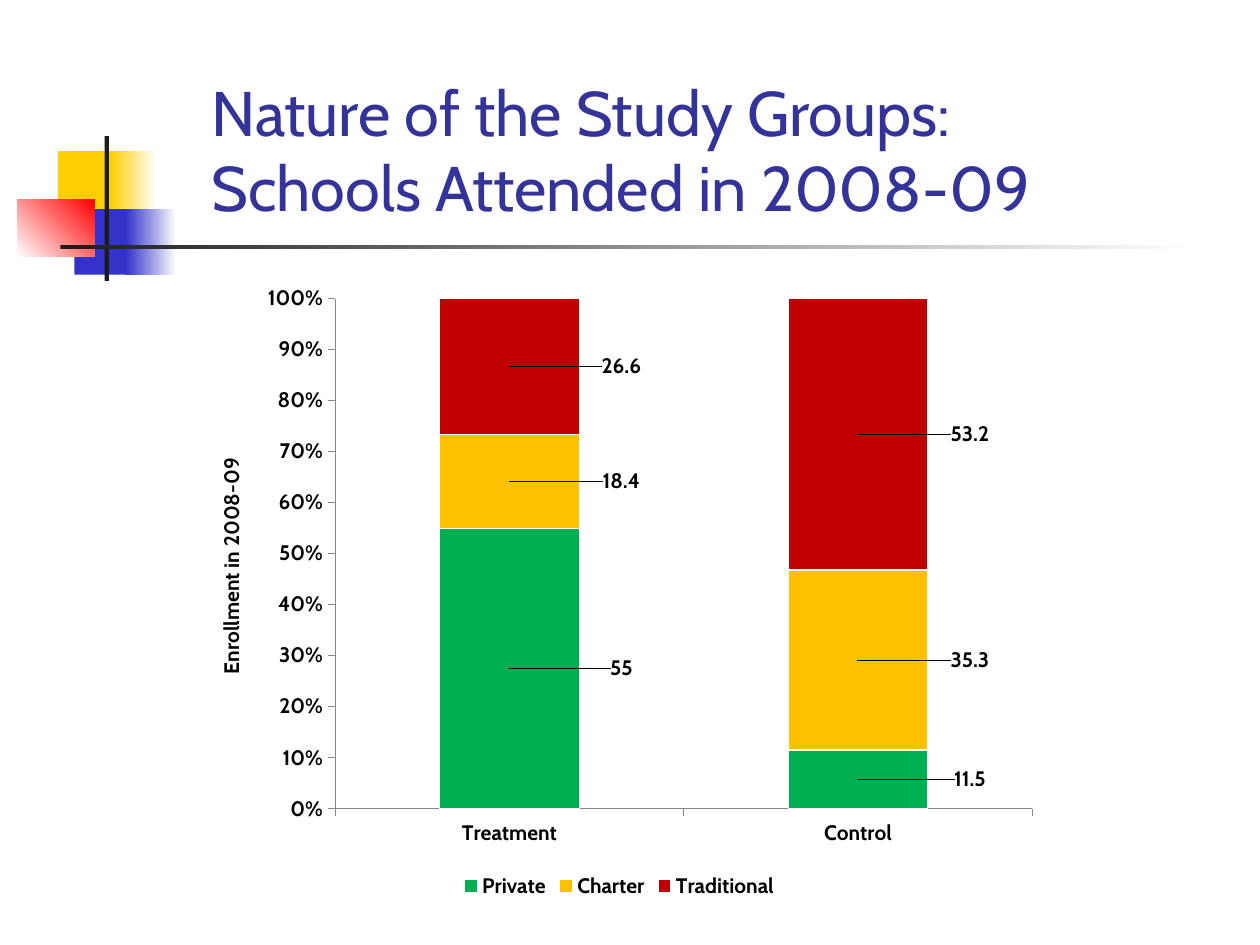
"""Build the study-groups slide: a percent-stacked column chart beneath an accented title."""
import lxml.etree
import pptx
import pptx.chart.data
import pptx.dml.color
import pptx.enum.chart
import pptx.enum.shapes
import pptx.enum.text
import pptx.oxml.ns
import pptx.util

COLORS = {"yellow": "FFCF01", "blue": "3333CC", "red": "FF0000", "ink": "1C1C1C",
          "white": "FFFFFF", "title": "333399", "text": "000000", "axis": "868686",
          "Private": "00B050", "Charter": "FFC000", "Traditional": "C00000"}
FONT = "Cabin"

deck = pptx.Presentation()
deck.slide_width = pptx.util.Inches(10)
deck.slide_height = pptx.util.Inches(7.5)
COLUMN = deck.slide_width / 100
ROW = deck.slide_height / 75
slide = deck.slides.add_slide(deck.slide_layouts[6])


def grid(left, top, width, height):
    return [round(left * COLUMN), round(top * ROW), round(width * COLUMN), round(height * ROW)]


def style(font, size, color, bold):
    for name, value in {"name": FONT, "size": pptx.util.Pt(size), "bold": bold}.items():
        setattr(font, name, value)
    font.color.rgb = pptx.dml.color.RGBColor.from_string(COLORS[color])


accents = [
    ((4.6, 12, 4.8, 5.2), ["yellow"], 0),
    ((8.8, 12, 3.6, 5.2), ["yellow", "white"], 0),
    ((5.9, 16.6, 4.6, 5.2), ["blue"], 0),
    ((10, 16.6, 4, 5.2), ["blue", "white"], 0),
    ((1.4, 15.8, 6.1, 4.6), ["white", "red"], 45),
    ((8.3, 10.8, 0.35, 11.5), ["ink"], 0),
    ((4.8, 19.45, 90, 0.35), ["ink", "white"], 0),
]
for place, shades, angle in accents:
    accent = slide.shapes.add_shape(pptx.enum.shapes.MSO_SHAPE.RECTANGLE, *grid(*place))
    accent.shadow.inherit = False
    accent.line.fill.background()
    if len(shades) == 1:
        accent.fill.solid()
        accent.fill.fore_color.rgb = pptx.dml.color.RGBColor.from_string(COLORS[shades[0]])
    else:
        accent.fill.gradient()
        accent.fill.gradient_angle = angle
        for stop, shade in zip(accent.fill.gradient_stops, shades):
            stop.color.rgb = pptx.dml.color.RGBColor.from_string(COLORS[shade])

title_box = slide.shapes.add_textbox(*grid(15.8, 5.8, 76.7, 12.5))
title_box.text_frame.word_wrap = True
title_box.text_frame.vertical_anchor = pptx.enum.text.MSO_ANCHOR.BOTTOM
span = title_box.text_frame.paragraphs[0].add_run()
span.text = "Nature of the Study Groups: Schools Attended in 2008-09"
style(span.font, 36, "title", False)

enrollment = pptx.chart.data.CategoryChartData()
enrollment.categories = ["Treatment", "Control"]
for name, values in {"Private": (55, 11.5), "Charter": (18.4, 35.3),
                     "Traditional": (26.6, 53.2)}.items():
    enrollment.add_series(name, values)
chart = slide.shapes.add_chart(pptx.enum.chart.XL_CHART_TYPE.COLUMN_STACKED_100,
                               *grid(15, 21.7, 68.3, 50), enrollment).chart
style(chart.font, 10, "text", False)
chart.has_title = False
chart.has_legend = True
chart.legend.position = pptx.enum.chart.XL_LEGEND_POSITION.BOTTOM
chart.legend.include_in_layout = False
style(chart.legend.font, 12, "text", True)

for axis in (chart.category_axis, chart.value_axis):
    for name, value in {"has_major_gridlines": False,
                        "major_tick_mark": pptx.enum.chart.XL_TICK_MARK.OUTSIDE,
                        "minor_tick_mark": pptx.enum.chart.XL_TICK_MARK.NONE}.items():
        setattr(axis, name, value)
    axis.format.line.color.rgb = pptx.dml.color.RGBColor.from_string(COLORS["axis"])
    axis.format.line.width = pptx.util.Pt(0.75)
    style(axis.tick_labels.font, 12, "text", True)
for name, value in {"minimum_scale": 0, "maximum_scale": 1, "major_unit": 0.1}.items():
    setattr(chart.value_axis, name, value)
chart.value_axis.tick_labels.number_format = "0%"
chart.value_axis.tick_labels.number_format_is_linked = False
axis_title = chart.value_axis.axis_title.text_frame
axis_title.text = "Enrollment in 2008-09"
style(axis_title.paragraphs[0].runs[0].font, 12, "text", True)

plot = chart.plots[0]
for name, value in {"gap_width": 150, "overlap": 100, "vary_by_categories": False}.items():
    setattr(plot, name, value)
for series in plot.series:
    series.format.fill.solid()
    series.format.fill.fore_color.rgb = pptx.dml.color.RGBColor.from_string(COLORS[series.name])
    series.format.line.color.rgb = pptx.dml.color.RGBColor.from_string(COLORS["white"])
    series.format.line.width = pptx.util.Pt(0.75)
    series.data_labels.show_value = True
    style(series.data_labels.font, 12, "text", True)
    for index in range(len(series.values)):
        label = series.points[index].data_label
        style(label.font, 12, "text", True)
        label.position = pptx.enum.chart.XL_LABEL_POSITION.CENTER

tag = pptx.oxml.ns.qn
layouts = [(label.find(tag("c:idx")), {"x": 0.13, "y": 0})
           for label in chart.element.iter(tag("c:dLbl"))]
plot_area = chart.element.find(".//" + tag("c:plotArea"))
for old_layout in plot_area.findall(tag("c:layout")):
    plot_area.remove(old_layout)
layouts.append((plot_area, {"layoutTarget": "inner", "xMode": "edge", "yMode": "edge",
                            "x": 0.17, "y": 0.04, "w": 0.81, "h": 0.81}))
for anchor, settings in layouts:
    layout = lxml.etree.Element(tag("c:layout"))
    manual = lxml.etree.SubElement(layout, tag("c:manualLayout"))
    for name, value in settings.items():
        lxml.etree.SubElement(manual, tag("c:" + name)).set("val", str(value))
    if anchor is plot_area:
        anchor.insert(0, layout)
    else:
        anchor.addnext(layout)

deck.save("out.pptx")
